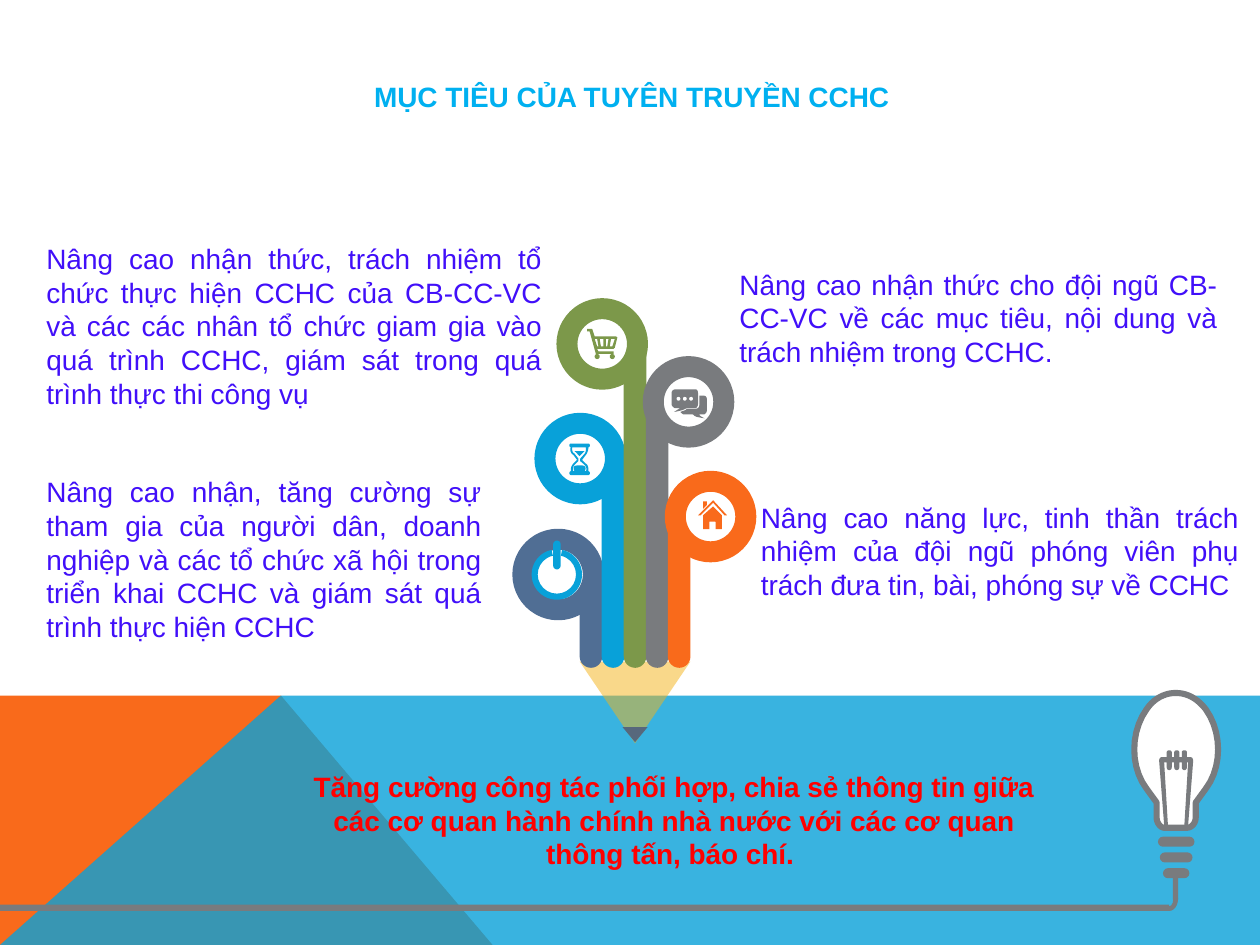
from math import cos, pi, sin

from lxml import etree
from pptx import Presentation
from pptx.dml.color import RGBColor
from pptx.enum import shapes, text
from pptx.oxml import ns
from pptx.util import Inches, Pt

HUES = {
    "orange": "F96A1B", "blue": "08A1D9", "grey": "797B7E", "green": "7C984A",
    "navy": "506E94", "wood": "F5B317", "lead": "57687C", "white": "FFFFFF",
    "title": "00B0F0", "body": "410FF9", "red": "FF0000",
}
KIND = shapes.MSO_SHAPE
ALIGN = text.PP_ALIGN


def paint(shape, fill, line=None, width=0, alpha=100):
    """Set fill, outline and opacity."""
    shape.shadow.inherit = False
    shape.fill.solid()
    shape.fill.fore_color.rgb = RGBColor.from_string(HUES[fill])
    if alpha < 100:
        hue = shape.fill._xPr.find(".//" + ns.qn("a:srgbClr"))
        etree.SubElement(hue, ns.qn("a:alpha"), val=str(alpha * 1000))
    if line:
        shape.line.color.rgb = RGBColor.from_string(HUES[line])
        shape.line.width = Pt(width)
    else:
        shape.line.fill.background()


def draw(slide, kind, box, fill, line=None, width=0, alpha=100, turn=0, adj=()):
    """Add a preset shape."""
    shape = slide.shapes.add_shape(kind, *map(Inches, box))
    shape.rotation = turn
    for i, value in enumerate(adj):
        shape.adjustments[i] = value
    paint(shape, fill, line, width, alpha)


def bend(start, curve, steps=10):
    """Sample a cubic curve into points."""
    pts = [start, curve[:2], curve[2:4], curve[4:]]
    out = []
    for i in range(1, steps + 1):
        t = i / steps
        mix = ((1 - t) ** 3, 3 * t * (1 - t) ** 2, 3 * t * t * (1 - t), t ** 3)
        out.append(tuple(sum(m * p[k] for m, p in zip(mix, pts)) for k in (0, 1)))
    return out


def dot(x, y, r):
    """Return a round outline."""
    return [(x + r * cos(pi * i / 8), y + r * sin(pi * i / 8)) for i in range(16)]


def trace(slide, left, top, rings, fill, line=None, width=0, alpha=100):
    """Add outlines given in hundredths of an inch; six numbers make a curve."""
    pen = None
    for ring in rings:
        flat = []
        for step in ring:
            flat += bend(flat[-1], step) if len(step) == 6 else [step]
        pts = [(Inches(left + x / 100), Inches(top + y / 100)) for x, y in flat]
        if pen is None:
            pen = slide.shapes.build_freeform(*pts[0], scale=1.0)
        else:
            pen.move_to(*pts[0])
        pen.add_line_segments(pts[1:], close=True)
    paint(pen.convert_to_shape(), fill, line, width, alpha)


def write(slide, box, words, hue="body", align=ALIGN.JUSTIFY, bold=False):
    """Add a text box and return its frame."""
    frame = slide.shapes.add_textbox(*map(Inches, box)).text_frame
    frame.word_wrap = True
    para = frame.paragraphs[0]
    para.text = words
    para.alignment = align
    para.font.name, para.font.size, para.font.bold = "Arial", Pt(16), bold
    para.font.color.rgb = RGBColor.from_string(HUES[hue])
    return frame


def floor(slide, x, y):
    """Draw the coloured ground."""
    trace(slide, x, y, [[(0, 198), (0, 0), (223, 0), (391, 198)]], "orange")
    trace(slide, x, y, [[(0, 198), (223, 0), (1000, 0), (1000, 198)]], "blue", alpha=80)


def bulb(slide, x, y):
    """Draw the bulb and its cable."""
    glass = [(33, 0), (42, 0, 50, 4, 57, 13), (70, 31, 70, 59, 57, 76), (49, 87),
             (49, 99), (49, 103, 46, 107, 42, 107), (24, 107),
             (21, 107, 18, 103, 18, 99), (18, 87), (10, 76),
             (-3, 59, -3, 31, 10, 13), (16, 4, 25, 0, 33, 0)]
    trace(slide, x, y, [glass], "white", "grey", 3.5)
    for i, wide in enumerate((0.29, 0.26, 0.21)):
        draw(slide, KIND.ROUNDED_RECTANGLE,
             (x + 0.335 - wide / 2, y + 1.14 + 0.125 * i, wide, 0.08), "grey", adj=[0.5])
    coils = (6, 12, 18)
    upper = [p for c in coils for p in ((c, 6), (c, 2), (c, 0, c + 4, 0, c + 4, 2), (c + 4, 6))]
    lower = [p for c in reversed(coils)
             for p in ((c + 4, 10), (c + 4, 14), (c + 4, 17, c, 17, c, 14), (c, 10))]
    wire = ([(0, 9), (0, 7, 1, 6, 2, 6)] + upper + [(25, 6), (26, 6, 27, 7, 27, 9), (23, 60),
            (23, 63, 20, 63, 20, 60), (23, 10)] + lower
            + [(4, 10), (7, 60), (7, 63, 4, 63, 4, 60)])
    trace(slide, x + 0.2, y + 0.45, [wire], "grey")
    draw(slide, KIND.RECTANGLE, (0, y + 1.68, x + 0.28, 0.05), "grey")
    draw(slide, KIND.RECTANGLE, (x + 0.31, y + 1.47, 0.04, 0.17), "grey")
    draw(slide, KIND.BLOCK_ARC, (x + 0.21, y + 1.54, 0.14, 0.19), "grey",
         adj=(213.39, 60.92, 0.27))


def pencil(slide, x, y):
    """Draw the tip, the five stems and their rings."""
    draw(slide, KIND.TRAPEZOID, (x + 0.45, y + 2.8, 0.88, 0.65), "wood",
         alpha=50, turn=180, adj=[0.79])
    draw(slide, KIND.ISOSCELES_TRIANGLE, (x + 0.79, y + 3.32, 0.2, 0.12), "lead", turn=180)
    stems = (("navy", 1.83), ("blue", 0.91), ("green", 0), ("grey", 0.46), ("orange", 1.37))
    for i, (hue, top) in enumerate(stems):
        left = x + 0.45 + 0.175 * i
        draw(slide, KIND.ROUND_2_SAME_RECTANGLE,
             (left, y + top + 0.28, 0.18, 2.57 - top), hue, turn=180, adj=(0.5, 0))
        ring = left + (0.06 if i > 2 else -0.45)
        draw(slide, KIND.OVAL, (ring, y + top, 0.56, 0.56), "white", hue, 12)


def chat(slide, x, y):
    """Draw two speech bubbles."""
    front = [(3, 0), (19, 0), (20, 0, 21, 1, 21, 3), (21, 12), (21, 13, 20, 15, 19, 15),
             (12, 15), (8, 17, 7, 17, 2, 18), (5, 16, 5, 16, 7, 15), (3, 15),
             (2, 15, 0, 13, 0, 12), (0, 3), (0, 1, 2, 0, 3, 0)]
    back = [(22, 5), (25, 5), (27, 5, 28, 6, 28, 8), (28, 17), (28, 18, 27, 20, 25, 20),
            (22, 20), (22, 20, 22, 21, 26, 23), (20, 22, 19, 22, 17, 20), (10, 20),
            (9, 20, 8, 19, 7, 18), (9, 17, 11, 17, 12, 15.5), (19, 15.5),
            (21, 15.5, 22, 14, 22, 13)]
    trace(slide, x, y, [front, back] + [dot(c, 7.5, 1.6) for c in (5.5, 10.5, 15.5)], "grey")


def glass(slide, x, y):
    """Draw the hourglass."""
    frame = [(2, 0), (16, 0), (17.5, 0, 17.5, 3, 16, 3), (16, 5, 15, 8, 14, 9), (11, 13),
             (14, 16), (16, 17, 16, 20, 16, 22), (17.5, 22, 17.5, 25, 16, 25), (2, 25),
             (0.5, 25, 0.5, 22, 2, 22), (2, 20, 2, 18, 4, 16), (7, 13), (4, 9),
             (2, 8, 1, 5, 2, 3), (0.5, 3, 0.5, 0, 2, 0)]
    hole = [(3, 3), (3, 5, 3, 7, 5, 8), (8, 12), (8, 14), (5, 17), (4, 18, 3, 20, 4, 22),
            (14, 22), (15, 20, 14, 18, 13, 17), (9.5, 14), (9.5, 12), (13, 8),
            (14, 7, 14, 5, 14, 3)]
    sand = [(5, 6), (13, 6), (12, 7), (9, 10), (6, 7)]
    heap = [(5, 22), (4, 20, 4, 19, 5, 18), (6, 17, 12, 17, 13, 18), (14, 19, 14, 20, 13, 22)]
    trace(slide, x, y, [frame, hole, sand, heap], "blue")


def cart(slide, x, y):
    """Draw the shopping cart."""
    body = [(0, 0), (4, 0), (6, 6), (23, 6), (24, 7), (22, 15), (21, 16), (8, 16), (9, 18),
            (21, 18), (21, 20), (7, 20), (2, 2), (0, 2)]
    gaps = [[(a, 8), (b, 8), (c, 14), (d, 14)] for a, b, c, d in
            ((6, 8, 9, 8), (10, 13, 13, 11), (15, 17, 16, 15), (19, 22, 20, 18))]
    trace(slide, x, y, [body, *gaps, dot(8, 22, 2), dot(20, 22, 2)], "green")


def house(slide, x, y):
    """Draw the house."""
    walls = [(12, 5), (19, 12), (19, 23), (14, 23), (14, 18), (14, 17, 14, 17, 13, 17),
             (10, 17), (9, 17, 9, 17, 9, 18), (9, 23), (4, 23), (4, 12)]
    stack = [(4, 1), (7, 1), (7, 4), (4, 7)]
    roof = [(12, 0), (23, 12), (21, 12), (12, 2), (2, 12), (0, 12)]
    trace(slide, x, y, [walls, stack, roof], "orange")


def power(slide, x, y):
    """Draw the power sign."""
    draw(slide, KIND.BLOCK_ARC, (x, y + 0.07, 0.4, 0.4), "blue", adj=(169.2, 154.8, 0.12))
    draw(slide, KIND.ROUNDED_RECTANGLE, (x + 0.17, y, 0.06, 0.23), "blue", adj=[0.5])


def main():
    """Build and save the slide."""
    deck = Presentation()
    deck.slide_width, deck.slide_height = Inches(10), Inches(7.5)
    slide = deck.slides.add_slide(deck.slide_layouts[6])
    floor(slide, 0, 5.52)
    bulb(slide, 9, 5.5)
    head = write(slide, (0.27, 0.37, 9.49, 0.79), "MỤC TIÊU CỦA TUYÊN TRUYỀN CCHC",
                 "title", ALIGN.CENTER, True)
    head.vertical_anchor = text.MSO_ANCHOR.MIDDLE
    pencil(slide, 4.15, 2.45)
    chat(slide, 5.33, 3.09)
    glass(slide, 4.51, 3.52)
    cart(slide, 4.66, 2.61)
    house(slide, 5.54, 3.97)
    power(slide, 4.22, 4.29)
    goals = (
        ((0.27, 1.87, 4.13, 1.45), "Nâng cao nhận thức, trách nhiệm tổ chức thực hiện CCHC của CB-CC-VC và các các nhân tổ chức giam gia vào quá trình CCHC, giám sát trong quá trình thực thi công vụ"),
        ((0.27, 3.72, 3.65, 1.45), "Nâng cao nhận, tăng cường sự tham gia của người dân, doanh nghiệp và các tổ chức xã hội trong triển khai CCHC và giám sát quá trình thực hiện CCHC"),
        ((5.77, 2.07, 3.99, 0.91), "Nâng cao nhận thức cho đội ngũ CB-CC-VC về các mục tiêu, nội dung và trách nhiệm trong CCHC."),
        ((5.94, 3.92, 3.99, 0.91), "Nâng cao năng lực, tinh thần trách nhiệm của đội ngũ phóng viên phụ trách đưa tin, bài, phóng sự về CCHC"),
    )
    for box, words in goals:
        write(slide, box, words)
    write(slide, (2.24, 6.06, 6.22, 0.91), "Tăng cường công tác phối hợp, chia sẻ thông tin giữa các cơ quan hành chính nhà nước với các cơ quan thông tấn, báo chí. ",
          "red", ALIGN.CENTER, True)
    deck.save("out.pptx")


if __name__ == "__main__":
    main()
